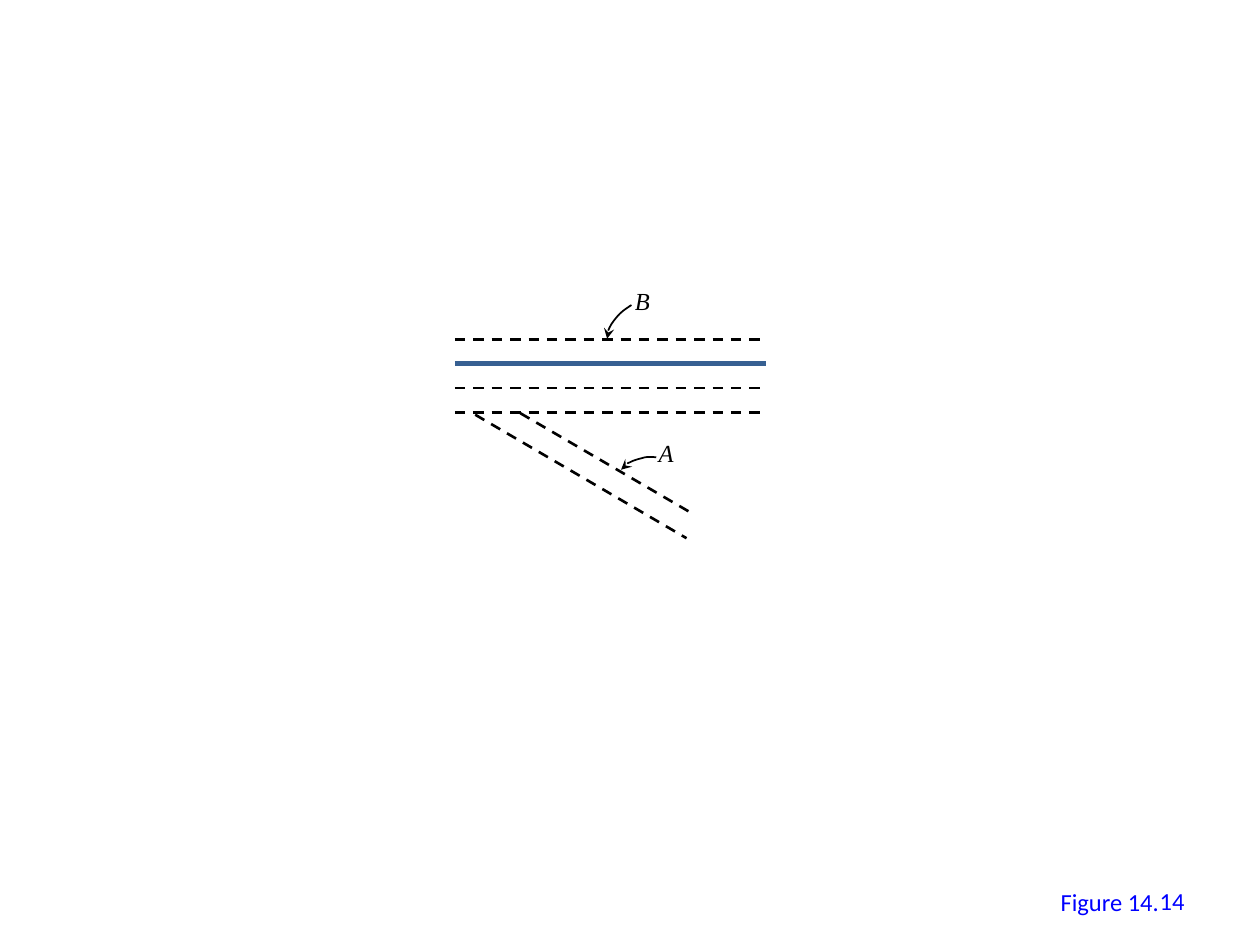
import pptx
import pptx.util
import pptx.dml.color
import pptx.enum.dml
import pptx.enum.shapes
import pptx.enum.text
import pptx.oxml
import pptx.oxml.ns

Cm = pptx.util.Cm
Pt = pptx.util.Pt
qn = pptx.oxml.ns.qn
DASH = pptx.enum.dml.MSO_LINE.DASH


def color(hex_code):
    return pptx.dml.color.RGBColor.from_string(hex_code)


deck = pptx.Presentation()
deck.slide_width, deck.slide_height = Cm(25.4), Cm(19.05)
slide = deck.slides.add_slide(deck.slide_layouts[6])

level_top, level_gap = 6.84, 0.49
levels = [(9.17, level_top + level_gap * i, 15.44, level_top + level_gap * i) for i in range(4)]
dashed = {"width": Pt(1.5), "dash_style": DASH}
solid = {"width": Pt(3)}
strokes = [
    (levels[0], "000000", dashed),
    (levels[2], "000000", dashed),
    (levels[3], "000000", dashed),
    (levels[1], "376092", solid),
    ((10.49, 8.33, 13.97, 10.36), "000000", dashed),
    ((9.58, 8.36, 13.84, 10.85), "000000", dashed),
]
for ends, hex_code, line_format in strokes:
    stroke = slide.shapes.add_connector(
        pptx.enum.shapes.MSO_CONNECTOR.STRAIGHT, *[Cm(value) for value in ends])
    stroke.line.color.rgb = color(hex_code)
    for attribute, value in line_format.items():
        setattr(stroke.line, attribute, value)
    pptx.oxml.ns.qn
    stroke._element.spPr.append(pptx.oxml.parse_xml(
        '<a:effectLst xmlns:a="http://schemas.openxmlformats.org/drawingml/2006/main"/>'))

pointer_b = [(12.24, 6.83), (12.24, 6.76), (12.24, 6.71), (12.29, 6.6), (12.32, 6.53),
             (12.42, 6.4), (12.5, 6.32), (12.57, 6.25), (12.73, 6.15), (12.73, 6.15)]
pointer_a = [(12.52, 9.47), (12.57, 9.42), (12.62, 9.35), (12.7, 9.32), (12.78, 9.27),
             (12.9, 9.25), (13, 9.22), (13.08, 9.2), (13.23, 9.22), (13.23, 9.22)]
for points in (pointer_b, pointer_a):
    start, *rest = [(Cm(x), Cm(y)) for x, y in points]
    builder = slide.shapes.build_freeform(*start)
    builder.add_line_segments(rest, close=False)
    pointer = builder.convert_to_shape()
    pointer.shadow.inherit = False
    pointer.fill.background()
    pointer.line.color.rgb = color("000000")
    pointer.line.width = Pt(1)
    pointer.line._get_or_add_ln().append(pptx.oxml.parse_xml(
        '<a:headEnd xmlns:a="http://schemas.openxmlformats.org/drawingml/2006/main" type="stealth"/>'))
    outline = next(pointer._element.iter(qn("a:path")))
    segments = outline.findall(qn("a:lnTo"))
    for i in range(0, len(segments), 3):
        curve = outline.makeelement(qn("a:cubicBezTo"), {})
        for segment in segments[i:i + 3]:
            curve.append(segment[0])
            outline.remove(segment)
        outline.append(curve)

label_font = {"name": "Times New Roman", "size": Pt(14), "italic": True}
caption_font = {"name": "Calibri", "size": Pt(14)}
fitted = {"word_wrap": False, "auto_size": pptx.enum.text.MSO_AUTO_SIZE.SHAPE_TO_FIT_TEXT}
middle = {"word_wrap": True, "vertical_anchor": pptx.enum.text.MSO_ANCHOR.MIDDLE}
LEFT, RIGHT = pptx.enum.text.PP_ALIGN.LEFT, pptx.enum.text.PP_ALIGN.RIGHT
texts = [
    ("Figure 14.", (21.13, 17.75, 2.51, 0.86), caption_font, "0000FF", fitted, LEFT),
    ("A", (13.03, 8.71, 0.94, 0.86), label_font, "000000", fitted, LEFT),
    ("B", (12.55, 5.64, 0.94, 0.86), label_font, "000000", fitted, LEFT),
    ("14", (18.21, 17.65, 5.92, 1.02), caption_font, "0000FF", middle, RIGHT),
]
for wording, place, font_format, hex_code, frame_format, alignment in texts:
    frame = slide.shapes.add_textbox(*[Cm(value) for value in place]).text_frame
    for attribute, value in frame_format.items():
        setattr(frame, attribute, value)
    paragraph = frame.paragraphs[0]
    paragraph.alignment = alignment
    run = paragraph.add_run()
    run.text = wording
    run.font.color.rgb = color(hex_code)
    for attribute, value in font_format.items():
        setattr(run.font, attribute, value)

deck.save("out.pptx")
